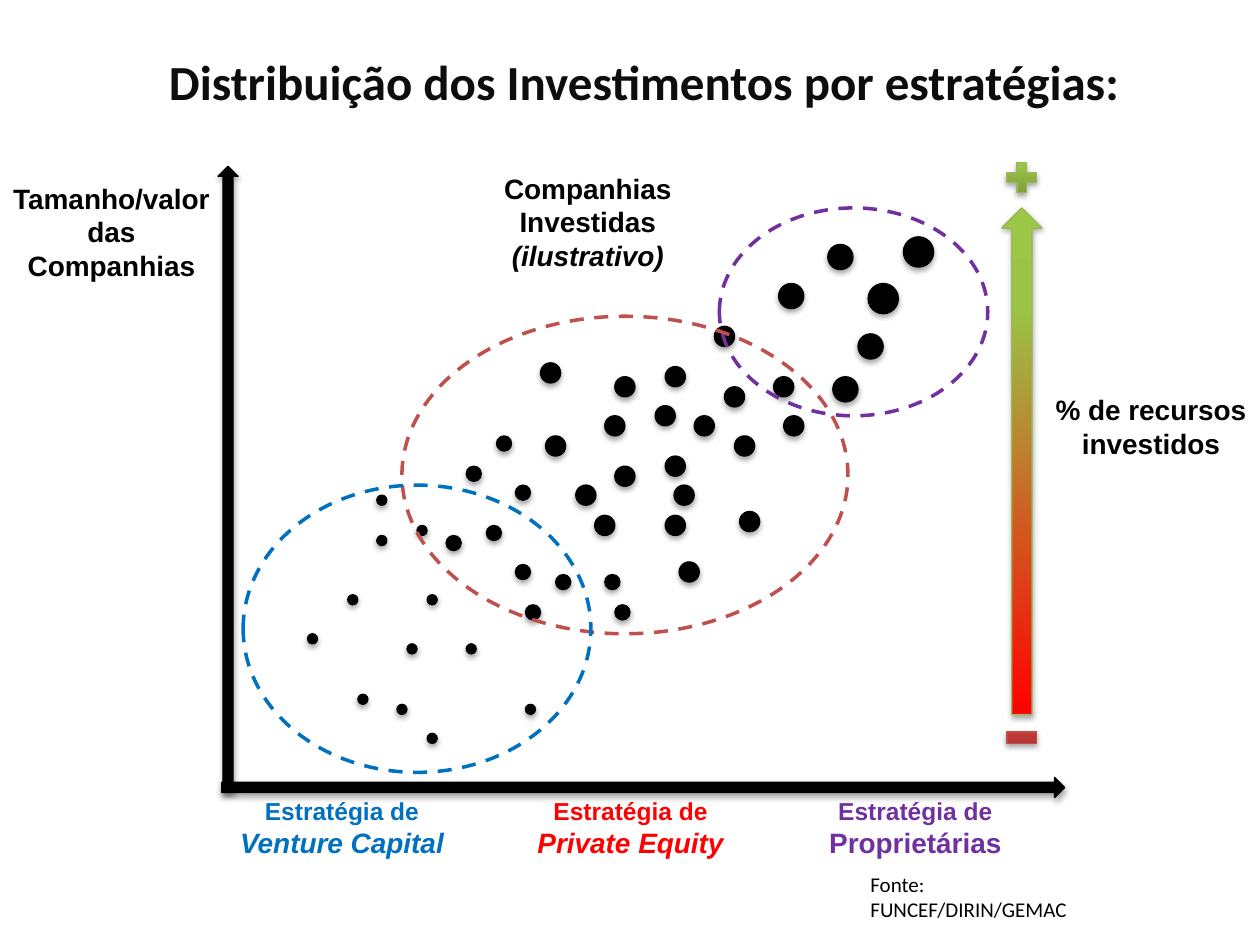
from lxml import etree
from pptx import Presentation
from pptx import util as u
from pptx.dml.color import RGBColor
from pptx.enum import dml, shapes, text
from pptx.oxml import ns

KIND = shapes.MSO_SHAPE
BLACK, BLUE, RED, PURPLE = "000000", "0070C0", "FF0000", "7030A0"
GREENS = ("779737", "9BC348", "9DC746")
REDS = ("9C2F2D", "CB3E3A", "CE3B37")
SCALE = (RED, "9BC348", "9DC746")

COMPANIES = {
    0.08: [(3.31, 4.17), (3.39, 4.72), (2.44, 5.03), (2.84, 5.51), (3.23, 5.11),
           (3.15, 5.59), (3.39, 5.82), (3.7, 5.11), (4.17, 5.59), (2.99, 4.25),
           (2.76, 4.72), (2.99, 3.93)],
    0.12: [(3.54, 4.25), (3.86, 4.17), (4.41, 4.56), (3.94, 3.46), (4.17, 4.8),
           (4.8, 4.56), (4.09, 4.48), (4.88, 4.8), (4.09, 3.85), (3.7, 3.7)],
    0.16: [(4.33, 3.46), (4.57, 3.85), (4.72, 4.09), (5.39, 4.46), (5.28, 3.62),
           (5.28, 4.09), (5.35, 3.85), (5.2, 3.22), (4.8, 3.3), (5.83, 3.46),
           (5.87, 4.06), (4.88, 3.7), (5.75, 3.07), (6.22, 3.3), (6.14, 2.99),
           (5.51, 3.3), (5.28, 2.91), (4.88, 2.99), (5.67, 2.59), (4.29, 2.88)],
    0.2: [(6.81, 2.65), (6.61, 2.99), (6.18, 2.25), (6.57, 1.94)],
    0.24: [(7.17, 1.88), (6.89, 2.25)],
}


def rgb(value):
    """Turn a hex string into a colour."""
    return RGBColor.from_string(value)


def inches(box):
    """Turn left, top, width and height into lengths."""
    return [u.Inches(length) for length in box]


def add_color(parent, value):
    """Append a hex colour element to an XML parent."""
    return etree.SubElement(parent, ns.qn("a:srgbClr"), val=value)


def add_shadow(shape):
    """Give a shape a soft shadow falling straight down."""
    effects = shape._element.spPr.find(ns.qn("a:effectLst"))
    shadow = etree.SubElement(effects, ns.qn("a:outerShdw"), blurRad=str(u.Pt(3.1)),
                              dist=str(u.Pt(1.8)), dir="5400000", rotWithShape="0")
    etree.SubElement(add_color(shadow, BLACK), ns.qn("a:alpha"), val="35000")


def fill_upward(shape, colors):
    """Fill a shape with a three-colour gradient rising from its base."""
    shape.fill.gradient()
    shape.fill.gradient_angle = 90
    stops = shape._element.spPr.find(".//" + ns.qn("a:gsLst"))
    for stop in list(stops):
        stops.remove(stop)
    for position, color in zip((0, 80000, 100000), colors):
        add_color(etree.SubElement(stops, ns.qn("a:gs"), pos=str(position)), color)


def add_solid(parent, kind, box, fill=BLACK, line=BLACK):
    """Add a shadowed shape with a plain or gradient fill."""
    shape = parent.add_shape(kind, *inches(box))
    shape.shadow.inherit = False
    if isinstance(fill, str):
        shape.fill.solid()
        shape.fill.fore_color.rgb = rgb(fill)
    else:
        fill_upward(shape, fill)
    shape.line.color.rgb = rgb(line)
    shape.line.width = u.Pt(0.75)
    add_shadow(shape)


def add_strategy_area(parent, box, color):
    """Add a dashed, unfilled ellipse around one strategy."""
    area = parent.add_shape(KIND.OVAL, *inches(box))
    area.shadow.inherit = False
    area.fill.background()
    area.line.color.rgb = rgb(color)
    area.line.width = u.Pt(2)
    area.line.dash_style = dml.MSO_LINE.DASH


def write(paragraph, words, size=16, font="Arial", color=BLACK, bold=True, italic=False):
    """Add a formatted run to a paragraph."""
    run = paragraph.add_run()
    run.text = words
    run.font.size = u.Pt(size)
    run.font.name = font
    run.font.color.rgb = rgb(color)
    run.font.bold = bold
    run.font.italic = italic


def add_label(parent, box, paragraphs, align=text.PP_ALIGN.CENTER):
    """Add a text box from paragraphs of (words, format) runs."""
    frame = parent.add_textbox(*inches(box)).text_frame
    frame.word_wrap = True
    frame.auto_size = text.MSO_AUTO_SIZE.SHAPE_TO_FIT_TEXT
    for index, runs in enumerate(paragraphs):
        paragraph = frame.add_paragraph() if index else frame.paragraphs[0]
        paragraph.alignment = align
        for words, style in runs:
            write(paragraph, words, **style)


def add_title(title, words):
    """Place and format the title placeholder."""
    title.left, title.top, title.width, title.height = inches((0.5, 0.13, 9.22, 1.02))
    title.text_frame.vertical_anchor = text.MSO_ANCHOR.MIDDLE
    paragraph = title.text_frame.paragraphs[0]
    paragraph.alignment = text.PP_ALIGN.CENTER
    write(paragraph, words, size=28, font="Calibri", color="0D0D0D")


def add_companies(parent):
    """Add the group of dots, sized by company."""
    group = parent.add_group_shape()
    for diameter, places in COMPANIES.items():
        for left, top in places:
            add_solid(group.shapes, KIND.OVAL, (left, top, diameter, diameter))


def main():
    """Build and save the slide."""
    deck = Presentation()
    deck.slide_width, deck.slide_height = u.Inches(10), u.Inches(7.5)
    slide = deck.slides.add_slide(deck.slide_layouts[5])
    canvas = slide.shapes
    add_title(canvas.title, "Distribuição dos Investimentos por estratégias:")

    add_solid(canvas, KIND.RIGHT_ARROW, (1.76, 6.17, 6.69, 0.16))
    add_solid(canvas, KIND.UP_ARROW, (1.73, 1.32, 0.16, 4.96))
    add_label(canvas, (0, 1.39, 1.77, 0.91), [[("Tamanho/valor das Companhias", {})]])

    add_solid(canvas, KIND.UP_ARROW, (7.95, 1.65, 0.32, 4.02), SCALE, "98B955")
    add_solid(canvas, KIND.MATH_PLUS, (7.95, 1.25, 0.32, 0.32), GREENS, "98B955")
    add_solid(canvas, KIND.MATH_MINUS, (7.95, 5.66, 0.32, 0.39), REDS, "BF4C48")
    add_label(canvas, (8.26, 3.07, 1.75, 0.64), [[("% de recursos investidos", {})]])

    for left, width, name, color, italic in (
            (1.73, 1.97, "Venture Capital", BLUE, True),
            (4.02, 1.97, "Private Equity", RED, True),
            (6.46, 1.61, "Proprietárias", PURPLE, False)):
        add_label(canvas, (left, 6.27, width, 0.61),
                  [[("Estratégia de ", {"size": 14, "color": color}),
                    (name, {"color": color, "italic": italic})]])

    add_companies(canvas)
    add_label(canvas, (3.82, 1.31, 1.69, 0.91),
              [[("Companhias Investidas", {})], [("(ilustrativo)", {"italic": True})]])
    add_strategy_area(canvas, (5.71, 1.65, 2.13, 1.65), PURPLE)
    add_strategy_area(canvas, (3.19, 2.51, 3.54, 2.52), "C0504D")
    add_strategy_area(canvas, (1.93, 3.85, 2.76, 2.28), BLUE)
    add_label(canvas, (6.81, 6.87, 2.17, 0.5),
              [[("Fonte: FUNCEF/DIRIN/GEMAC", {"size": 12, "font": "Calibri", "bold": False})]],
              align=text.PP_ALIGN.LEFT)
    deck.save("out.pptx")


if __name__ == "__main__":
    main()
